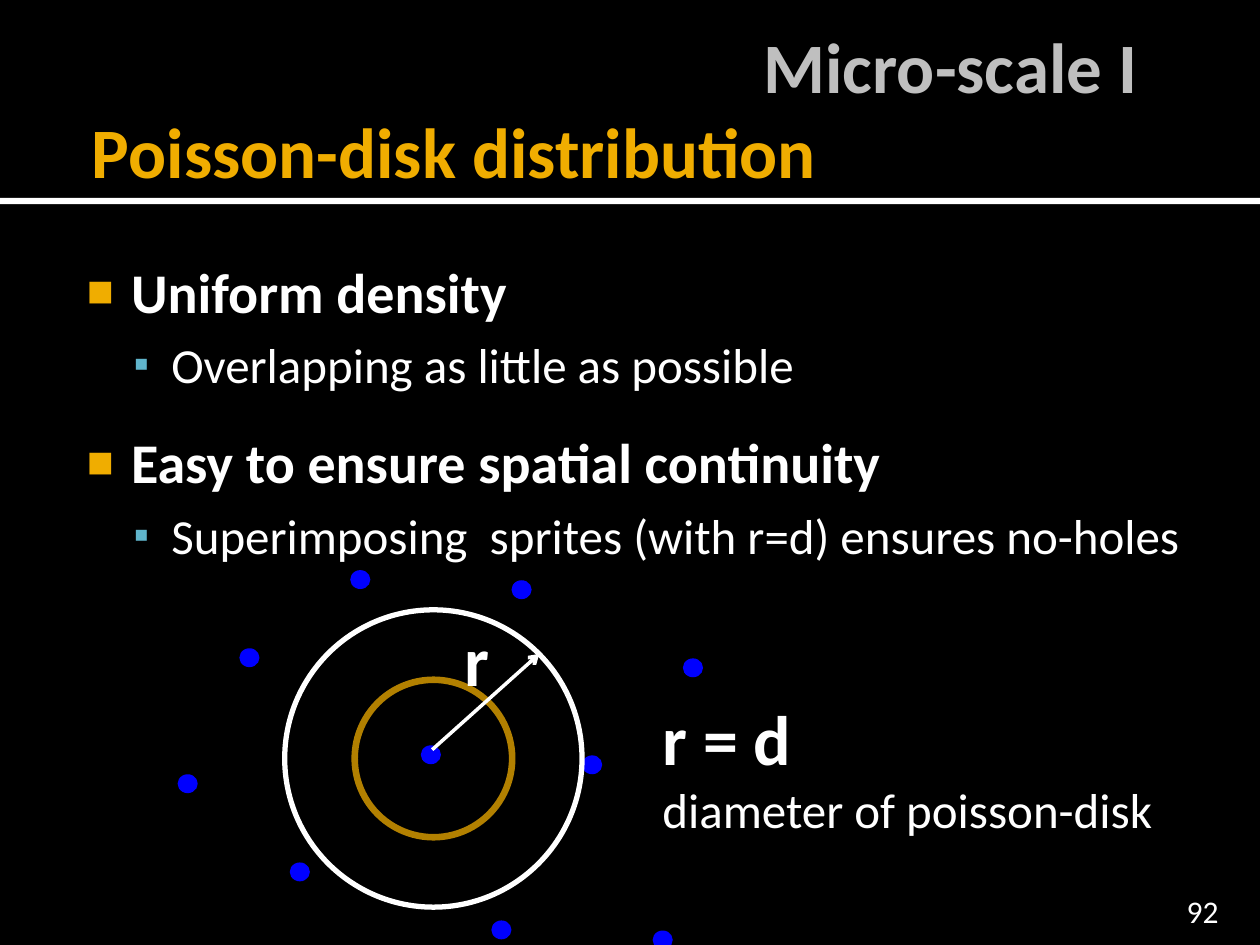
from lxml.etree import SubElement
from pptx import Presentation
from pptx.dml.color import RGBColor
from pptx.enum.shapes import MSO_CONNECTOR, MSO_SHAPE
from pptx.enum.text import MSO_ANCHOR, MSO_AUTO_SIZE, PP_ALIGN
from pptx.oxml.ns import qn
from pptx.util import Emu, Inches, Pt

COLORS = {"black": "000000", "white": "FFFFFF", "gold": "F0AD00", "dark gold": "B28000",
          "teal": "60B5CC", "gray": "BFBFBF", "blue": "0000FF"}
FONT = "Calibri"

TITLE = [("Micro-scale I", "gray", 5.46), ("Poisson-disk distribution", "gold", 0.13)]
BULLETS = [
    ("Uniform density", 0), ("Overlapping as little as possible", 1),
    ("Easy to ensure spatial continuity", 0),
    ("Superimposing  sprites (with r=d) ensures no-holes", 1),
]
LEVELS = [
    dict(size=32, bold=True, before=20, indent=(0.48, -0.35), bullet=("■", "gold", 80)),
    dict(size=28, before=5.6, indent=(0.8, -0.3), bullet=("▪", "teal", 90)),
]
SAMPLES = [(4.14, 4.68), (4.7, 6.07), (5.26, 7.46), (3.42, 5.99), (3.98, 7.38),
           (2.38, 6.92), (5.5, 5.3), (2.86, 4.6), (1.98, 5.22), (1.49, 6.22)]
DISK_CENTER = (3.44, 6.02)
DISKS = [(1.25, "dark gold", 3.78), (2.36, "white", 3)]  # diameter, colour, line width
RADIUS_ARROW = ((3.43, 5.95), (4.28, 5.19))


def rgb(name):
    return RGBColor.from_string(COLORS[name])


def add_text(tf, text, size=28, color="white", bold=False, align=PP_ALIGN.LEFT,
             before=0, indent=(0, 0), bullet=None, level=0):
    """Fill the first empty paragraph of tf, or append one."""
    p = tf.paragraphs[0] if not tf.text else tf.add_paragraph()
    p.level, p.alignment, p.space_before = level, align, Pt(before)
    r = p.add_run()
    r.text = text
    r.font.name, r.font.size, r.font.bold = FONT, Pt(size), bold
    r.font.color.rgb = rgb(color)
    pPr = p._p.get_or_add_pPr()
    pPr.set("marL", str(Inches(indent[0])))
    pPr.set("indent", str(Inches(indent[1])))
    if bullet:
        char, bullet_color, percent = bullet
        clr = SubElement(pPr, qn("a:buClr"))
        SubElement(clr, qn("a:srgbClr"), val=COLORS[bullet_color])
        SubElement(pPr, qn("a:buSzPct"), val=str(percent * 1000))
        SubElement(pPr, qn("a:buFont"), typeface="Arial")
        SubElement(pPr, qn("a:buChar"), char=char)


def frame(sp, box, insets=(0.1, 0.05, 0.1, 0.05), anchor=MSO_ANCHOR.TOP):
    """Place sp and return its prepared text frame."""
    sp.left, sp.top, sp.width, sp.height = map(Inches, box)
    tf = sp.text_frame
    tf.word_wrap, tf.auto_size, tf.vertical_anchor = True, MSO_AUTO_SIZE.NONE, anchor
    tf.margin_left, tf.margin_top, tf.margin_right, tf.margin_bottom = map(Inches, insets)
    return tf


def text_box(s, box, **kwargs):
    return frame(s.shapes.add_textbox(0, 0, 0, 0), box, **kwargs)


def add_shape(s, kind, box, fill=None, line=None, width=0):
    sp = s.shapes.add_shape(kind, *map(Inches, box))
    sp.shadow.inherit = False
    if fill:
        sp.fill.solid()
        sp.fill.fore_color.rgb = rgb(fill)
    else:
        sp.fill.background()
    if line:
        sp.line.color.rgb = rgb(line)
        sp.line.width = Pt(width)
    else:
        sp.line.fill.background()


def add_circle(s, center, w, h, **style):
    x, y = center
    add_shape(s, MSO_SHAPE.OVAL, (x - w / 2, y - h / 2, w, h), **style)


def add_arrow(s, start, end):
    c = s.shapes.add_connector(MSO_CONNECTOR.STRAIGHT, *map(Inches, start + end))
    c.line.color.rgb = rgb("white")
    c.line.width = Pt(2)
    SubElement(c.line._get_or_add_ln(), qn("a:tailEnd"), type="arrow")
    SubElement(c._element.spPr, qn("a:effectLst"))


def main():
    prs = Presentation()
    prs.slide_width, prs.slide_height = Inches(10), Inches(7.5)
    s = prs.slides.add_slide(prs.slide_layouts[1])
    s.background.fill.solid()
    s.background.fill.fore_color.rgb = rgb("black")

    add_shape(s, MSO_SHAPE.RECTANGLE, (0, 1.57, 10, 0.05), fill="white")
    title = frame(s.shapes.title, (0.5, 0.17, 9, 1.37), (0.1, 0.05, 0.05, 0.05),
                  MSO_ANCHOR.MIDDLE)
    for text, color, left in TITLE:
        add_text(title, text, size=40.5, color=color, bold=True, indent=(left, 0))
    body = frame(s.placeholders[1], (0.5, 1.94, 9.5, 5.06), (0.06, 0.1, 0.1, 0.05))
    for text, level in BULLETS:
        add_text(body, text, level=level, **LEVELS[level])

    for center in SAMPLES:
        add_circle(s, center, 0.16, 0.15, fill="blue")
    for diameter, color, width in DISKS:
        add_circle(s, DISK_CENTER, diameter, diameter, line=color, width=width)
    add_arrow(s, *RADIUS_ARROW)

    add_text(text_box(s, (3.59, 4.84, 0.47, 0.77)), "r", size=40, bold=True)
    caption = text_box(s, (5.16, 5.47, 4.84, 1.25))
    add_text(caption, "r = d", size=40, bold=True)
    add_text(caption, "diameter of poisson-disk")
    number = text_box(s, (8.97, 7.08, 0.8, 0.3), insets=(0.1, 0.05, 0.1, 0),
                      anchor=MSO_ANCHOR.BOTTOM)
    add_text(number, "92", size=18, align=PP_ALIGN.RIGHT)

    prs.save("out.pptx")


if __name__ == "__main__":
    main()
